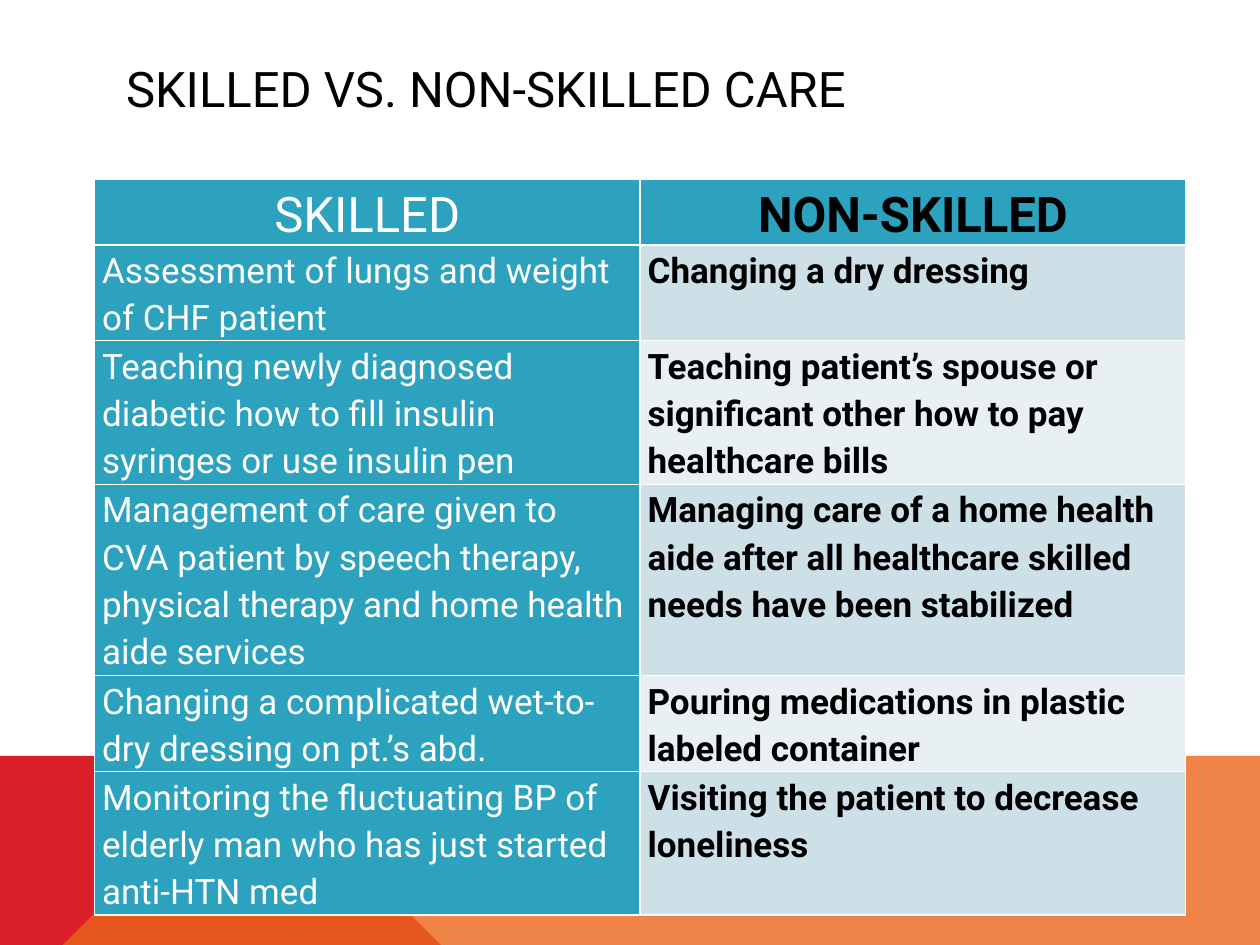
import lxml.etree
import pptx
import pptx.dml.color
import pptx.enum.text
import pptx.oxml.ns
import pptx.util

Inches, Pt = pptx.util.Inches, pptx.util.Pt
RGB = pptx.dml.color.RGBColor.from_string
PP_ALIGN = pptx.enum.text.PP_ALIGN
qn = pptx.oxml.ns.qn

THEME = {
    "font": "Roboto", "heading_size": 28, "body_size": 20, "line_spacing": 1.15,
    "black": "000000", "white": "FFFFFF", "teal": "2DA2BF",
    "bands": ["CDE0E8", "E8F0F4"], "red": "DA1F28", "orange": "EB641B",
}
WIDTH, HEIGHT = 10, 7.5
HEADER_HEIGHT, LINE_HEIGHT = 0.51, 0.38
COLUMN_WIDTH = 0.433 * WIDTH

# Skilled care, non-skilled care, lines of text in the row
CARE_ROWS = [
    ("SKILLED", "NON-SKILLED", 1),
    ("Assessment of lungs and weight of CHF patient", "Changing a dry dressing", 2),
    ("Teaching newly diagnosed diabetic how to fill insulin syringes or use insulin pen",
     "Teaching patient’s spouse or significant other how to pay healthcare bills", 3),
    ("Management of care given to CVA patient by speech therapy, physical therapy "
     "and home health aide services",
     "Managing care of a home health aide after all healthcare skilled needs "
     "have been stabilized", 4),
    ("Changing a complicated wet-to-dry dressing on pt.’s abd.",
     "Pouring medications in plastic labeled container", 2),
    ("Monitoring the fluctuating BP of elderly man who has just started anti-HTN med",
     "Visiting the patient to decrease loneliness", 3),
]


def add_text(paragraph, text, size, color, bold=False):
    run = paragraph.add_run()
    run.text = text
    run.font.name = THEME["font"]
    run.font.size = Pt(size)
    run.font.bold = bold
    run.font.color.rgb = RGB(color)


def add_borders(cell):
    """Draw a thin white line on all four sides of a table cell."""
    properties = cell._tc.get_or_add_tcPr()
    for side in ("a:lnL", "a:lnR", "a:lnT", "a:lnB"):
        line = lxml.etree.SubElement(properties, qn(side), w=str(Pt(1)))
        fill = lxml.etree.SubElement(line, qn("a:solidFill"))
        lxml.etree.SubElement(fill, qn("a:srgbClr"), val=THEME["white"])


prs = pptx.Presentation()
prs.slide_width, prs.slide_height = Inches(WIDTH), Inches(HEIGHT)
slide = prs.slides.add_slide(prs.slide_layouts[5])
slide.background.fill.solid()
slide.background.fill.fore_color.rgb = RGB(THEME["white"])

# Footer band: a red wedge with a translucent orange slope over it
band_top, slope_top, wedge_end = 5.52, 2.23, 3.91
footer_parts = [
    (THEME["red"], 100, [(0, HEIGHT), (0, band_top), (slope_top, band_top), (wedge_end, HEIGHT)]),
    (THEME["orange"], 80, [(0, HEIGHT), (slope_top, band_top), (WIDTH, band_top), (WIDTH, HEIGHT)]),
]
for color, opacity, corners in footer_parts:
    outline = slide.shapes.build_freeform(*corners[0], scale=Inches(1))
    outline.add_line_segments(corners[1:], close=True)
    wedge = outline.convert_to_shape()
    wedge.shadow.inherit = False
    wedge.line.fill.background()
    wedge.fill.solid()
    wedge.fill.fore_color.rgb = RGB(color)
    if opacity < 100:
        tint = wedge._element.spPr.find(qn("a:solidFill"))[0]
        lxml.etree.SubElement(tint, qn("a:alpha"), val=str(opacity * 1000))

title = slide.shapes.title
title.left, title.top = Inches(0.9), Inches(0.4)
title.width, title.height = Inches(8.22), Inches(0.6)
title.text_frame.vertical_anchor = pptx.enum.text.MSO_ANCHOR.MIDDLE
heading = title.text_frame.paragraphs[0]
heading.alignment = PP_ALIGN.LEFT
add_text(heading, "SKILLED VS. NON-SKILLED CARE", THEME["heading_size"], THEME["black"])

row_heights = [HEADER_HEIGHT] + [lines * LINE_HEIGHT for *_, lines in CARE_ROWS[1:]]
care_table = slide.shapes.add_table(
    len(CARE_ROWS), 2, Inches(0.75), Inches(1.42),
    Inches(2 * COLUMN_WIDTH), Inches(sum(row_heights))).table
for column in care_table.columns:
    column.width = Inches(COLUMN_WIDTH)

for r, (skilled, non_skilled, _) in enumerate(CARE_ROWS):
    care_table.rows[r].height = Inches(row_heights[r])
    is_header = r == 0
    size = THEME["heading_size"] if is_header else THEME["body_size"]
    band = THEME["teal"] if is_header else THEME["bands"][(r - 1) % 2]
    styles = [(skilled, THEME["teal"], THEME["white"], False),
              (non_skilled, band, THEME["black"], True)]
    for c, (text, fill, color, bold) in enumerate(styles):
        cell = care_table.cell(r, c)
        cell.margin_left = cell.margin_right = Inches(0.06)
        cell.margin_top = cell.margin_bottom = 0
        add_borders(cell)
        cell.fill.solid()
        cell.fill.fore_color.rgb = RGB(fill)
        paragraph = cell.text_frame.paragraphs[0]
        paragraph.alignment = PP_ALIGN.CENTER if is_header else PP_ALIGN.LEFT
        paragraph.line_spacing = THEME["line_spacing"]
        add_text(paragraph, text, size, color, bold)

prs.save("out.pptx")
